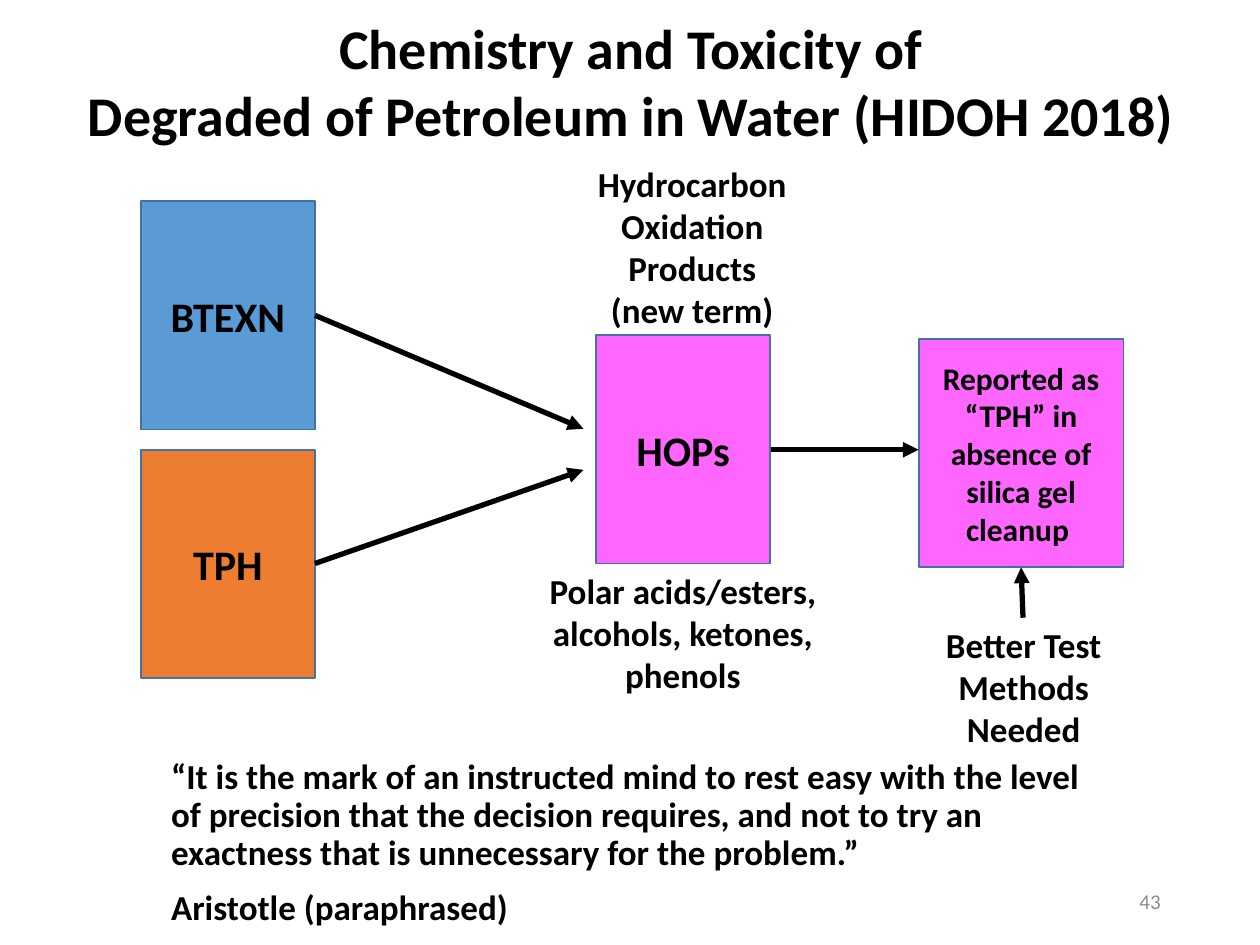
"""Builds the slide on the chemistry and toxicity of degraded petroleum in water."""
import lxml.etree
import pptx
import pptx.dml.color
import pptx.enum.shapes
import pptx.enum.text
import pptx.oxml.ns
import pptx.util

Pt = pptx.util.Pt
RGB = pptx.dml.color.RGBColor.from_string
Align = pptx.enum.text.PP_ALIGN
Anchor = pptx.enum.text.MSO_ANCHOR
qn = pptx.oxml.ns.qn

theme = {
    "font": "Calibri", "ink": "000000", "edge": "43739E", "gray": "8C8C8C",
    "blue": "5B9BD5", "orange": "ED7D31", "pink": "FF66FF",
    "title": 32, "box": 24, "label": 20, "report": 18, "number": 12,
}


def write(shape, text, size, align=Align.CENTER, anchor=Anchor.TOP, wrap=True, color="ink", bold=True):
    """Put styled text into a shape."""
    frame = shape.text_frame
    frame.text = text
    frame.word_wrap = wrap
    frame.vertical_anchor = anchor
    for para in frame.paragraphs:
        para.alignment = align
        for run in para.runs:
            run.font.name = theme["font"]
            run.font.size = Pt(theme[size])
            run.font.bold = bold
            run.font.color.rgb = RGB(theme[color])
    return frame


deck = pptx.Presentation()
deck.slide_width, deck.slide_height = Pt(720), Pt(540)
slide = deck.slides.add_slide(deck.slide_layouts[6])
shapes = slide.shapes

title = shapes.add_textbox(Pt(40.3), Pt(4.3), Pt(640.8), Pt(85))
write(title, "Chemistry and Toxicity of\nDegraded of Petroleum in Water (HIDOH 2018)", "title", wrap=False)

tall = 130.5
boxes = [
    ("BTEXN", 80.5, 115, 99.5, "blue", "box"),
    ("TPH", 80.5, 257, 99.5, "orange", "box"),
    ("HOPs", 340.6, 191.5, 99.5, "pink", "box"),
    ("Reported as “TPH” in absence of silica gel cleanup ", 525, 193.7, 117, "pink", "report"),
]
for text, left, top, width, fill, size in boxes:
    box = shapes.add_shape(pptx.enum.shapes.MSO_SHAPE.RECTANGLE, Pt(left), Pt(top), Pt(width), Pt(tall))
    box.shadow.inherit = False
    box.fill.solid()
    box.fill.fore_color.rgb = RGB(theme[fill])
    box.line.color.rgb = RGB(theme["edge"])
    box.line.width = Pt(1)
    write(box, text, size, anchor=Anchor.MIDDLE)

labels = [
    ("Hydrocarbon Oxidation Products\n(new term)", 321.1, 89.3, 149, 104.4),
    ("Polar acids/esters, alcohols, ketones, phenols", 298.1, 322, 184.3, 80),
    ("Better Test Methods Needed", 528.5, 353, 113, 80),
]
for text, left, top, width, height in labels:
    label = shapes.add_textbox(Pt(left), Pt(top), Pt(width), Pt(height))
    write(label, text, "label")

arrows = [
    (180, 180.2, 333.4, 245),
    (180, 322, 333.4, 268.5),
    (440.4, 257, 525, 257),
    (584.6, 353, 583.5, 324.2),
]
for ends in arrows:
    arrow = shapes.add_connector(pptx.enum.shapes.MSO_CONNECTOR.STRAIGHT, *map(Pt, ends))
    arrow.line.color.rgb = RGB(theme["ink"])
    arrow.line.width = Pt(3)
    lxml.etree.SubElement(arrow.line._get_or_add_ln(), qn("a:tailEnd"), type="triangle")
    lxml.etree.SubElement(arrow._element.spPr, qn("a:effectLst"))

quote = shapes.add_textbox(Pt(90.7), Pt(430.6), Pt(549.4), Pt(105))
words = (
    "“It is the mark of an instructed mind to rest easy with the level of precision that "
    "the decision requires, and not to try an exactness that is unnecessary for the problem.”\n"
    "Aristotle (paraphrased)"
)
frame = write(quote, words, "label", align=Align.LEFT)
for para in frame.paragraphs:
    para.line_spacing = 0.9
frame.paragraphs[1].space_before = Pt(10)

page = shapes.add_textbox(Pt(508.3), Pt(500.5), Pt(162), Pt(28.8))
write(page, "43", "number", align=Align.RIGHT, anchor=Anchor.MIDDLE, color="gray", bold=False)

deck.save("out.pptx")
